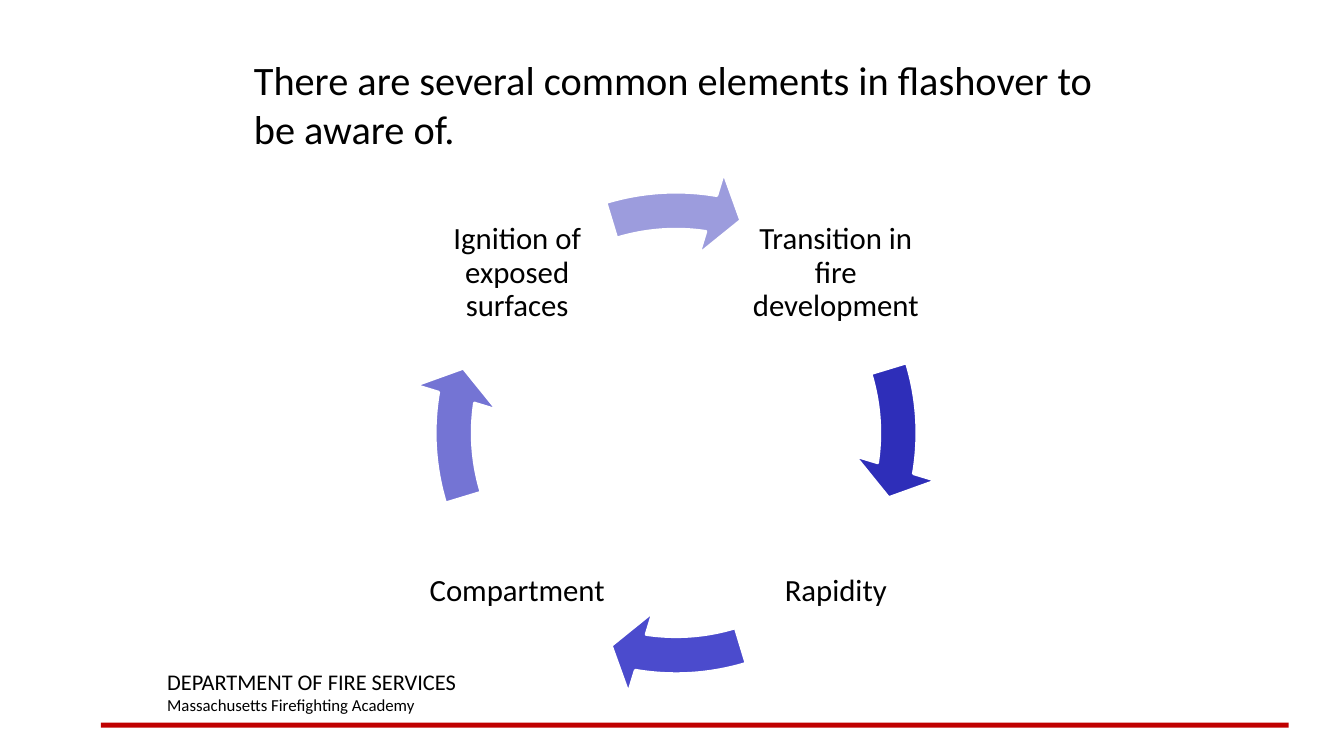
import pptx
import pptx.util
import pptx.dml.color
import pptx.enum.shapes
import pptx.enum.text

Inches = pptx.util.Inches
Pt = pptx.util.Pt
SHAPES = pptx.enum.shapes.MSO_SHAPE
ALIGN = pptx.enum.text.PP_ALIGN
ANCHOR = pptx.enum.text.MSO_ANCHOR

TITLE = "There are several common elements in flashover to be aware of."
FOOTER = [("DEPARTMENT OF FIRE SERVICES", 16), ("Massachusetts Firefighting Academy", 12)]
CYCLE = [
    ("Transition in fire development", "2E2EB9"),
    ("Rapidity", "4B4BCD"),
    ("Compartment", "7474D4"),
    ("Ignition of exposed surfaces", "9C9CDD"),
]
CENTER_X, CENTER_Y = 6.71, 4.29
LABEL_OFFSET, LABEL_SIZE = 1.58, 1.86
RING_LEFT, RING_TOP, RING_SIZE = 4.08, 1.67, 5.25
QUARTER_TURN, FULL_TURN = 54, 216
HEAD_ANGLE, TAIL_ANGLE = 5.49, 205.86


def color(hex_string):
    return pptx.dml.color.RGBColor.from_string(hex_string)


def add_shape(slide, kind, left, top, width, height, fill):
    shape = slide.shapes.add_shape(
        kind, Inches(left), Inches(top), Inches(width), Inches(height))
    shape.shadow.inherit = False
    shape.fill.solid()
    shape.fill.fore_color.rgb = color(fill)
    shape.line.fill.background()
    return shape


def add_text(slide, left, top, width, height, lines):
    box = slide.shapes.add_textbox(
        Inches(left), Inches(top), Inches(width), Inches(height))
    frame = box.text_frame
    frame.word_wrap = True
    for index, (text, size) in enumerate(lines):
        paragraph = frame.add_paragraph() if index else frame.paragraphs[0]
        run = paragraph.add_run()
        run.text = text
        run.font.name = "Calibri"
        run.font.size = Pt(size)
        run.font.color.rgb = color("000000")
    return frame


def add_label(slide, text, position):
    side = 1 if position in (0, 1) else -1
    level = 1 if position in (1, 2) else -1
    left = CENTER_X + side * LABEL_OFFSET - LABEL_SIZE / 2
    top = CENTER_Y + level * LABEL_OFFSET - LABEL_SIZE / 2
    frame = add_text(slide, left, top, LABEL_SIZE, LABEL_SIZE, [(text, 22)])
    frame.vertical_anchor = ANCHOR.MIDDLE
    frame.margin_left = frame.margin_right = Inches(0.03)
    frame.margin_top = frame.margin_bottom = Inches(0.03)
    frame.paragraphs[0].alignment = ALIGN.CENTER
    frame.paragraphs[0].line_spacing = 0.9


def add_arrow(slide, fill, position):
    arrow = add_shape(slide, SHAPES.CIRCULAR_ARROW, RING_LEFT, RING_TOP,
                      RING_SIZE, RING_SIZE, fill)
    arrow.line.color.rgb = color("FFFFFF")
    arrow.line.width = Pt(2)
    turn = position * QUARTER_TURN
    angles = ((HEAD_ANGLE + turn) % FULL_TURN, (TAIL_ANGLE + turn) % FULL_TURN)
    for index, value in enumerate((0.07, 4.66, *angles, 0.08)):
        arrow.adjustments[index] = value


def main():
    presentation = pptx.Presentation()
    presentation.slide_width = Inches(13.33)
    presentation.slide_height = Inches(7.5)
    slide = presentation.slides.add_slide(presentation.slide_layouts[6])

    add_shape(slide, SHAPES.RECTANGLE, 1, 7.17, 11.78, 0.05, "C00000")
    add_text(slide, 1.56, 6.58, 5.67, 0.57, FOOTER)
    for position, (text, fill) in enumerate(CYCLE):
        add_label(slide, text, position)
        add_arrow(slide, fill, position)
    add_text(slide, 2.42, 0.5, 8.83, 1, [(TITLE, 28.8)])

    presentation.save("out.pptx")


if __name__ == "__main__":
    main()
